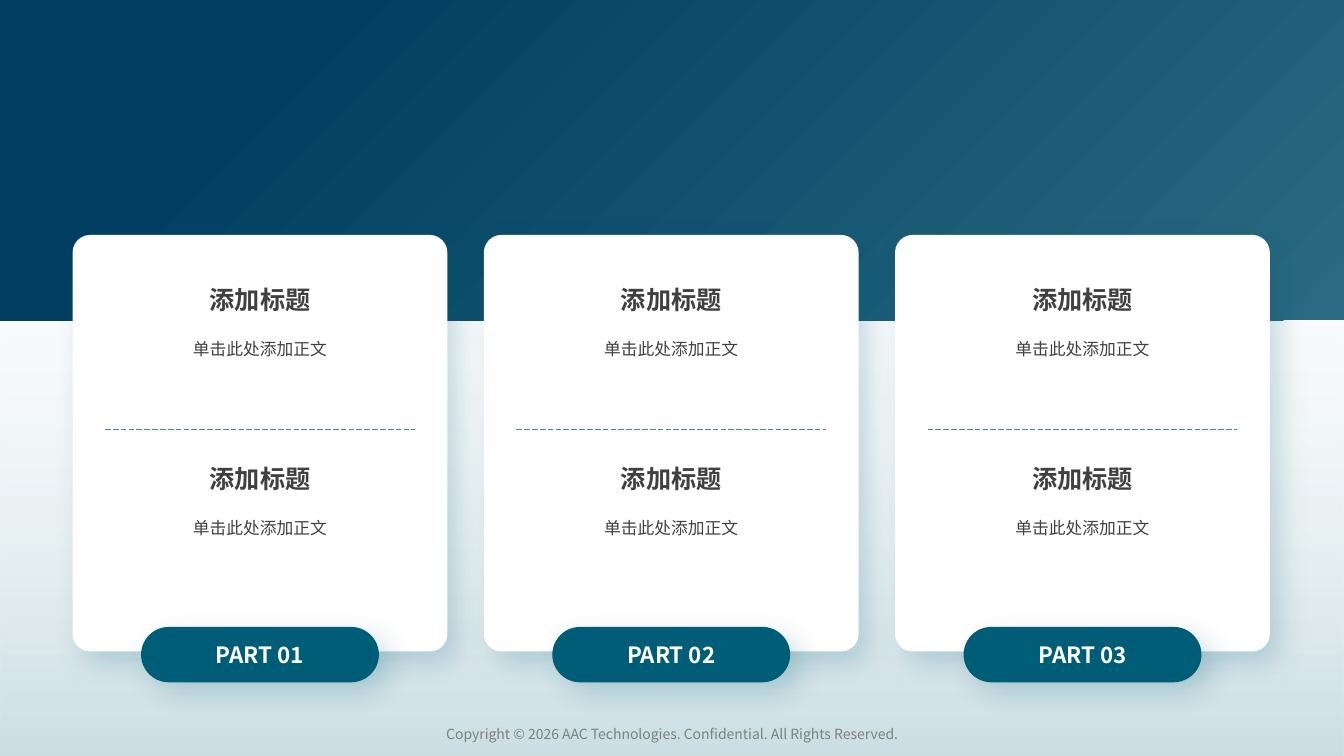
from dataclasses import dataclass

from pptx import Presentation
from pptx.dml.color import RGBColor
from pptx.enum.dml import MSO_LINE
from pptx.enum.shapes import MSO_CONNECTOR, MSO_SHAPE
from pptx.enum.text import MSO_ANCHOR, PP_ALIGN
from pptx.oxml import parse_xml
from pptx.oxml.ns import nsdecls, qn
from pptx.oxml.xmlchemy import OxmlElement
from pptx.util import Inches, Pt


@dataclass(frozen=True)
class Theme:
    font: str = "Noto Sans CJK SC"
    teal: str = "005D77"
    mist: str = "DCE8ED"
    navy: str = "003F61"
    steel: str = "2A6A82"
    rule: str = "438A9C"
    white: str = "FFFFFF"
    text: str = "404040"
    muted: str = "808080"
    heading: int = 18
    label: int = 16
    body: int = 12
    footer: int = 10


class Deck:
    """Holds the theme and the current slide; lengths are percent of its size."""

    def __init__(self, theme):
        self.theme = theme
        self.prs = Presentation()
        self.prs.slide_width, self.prs.slide_height = Inches(13.34), Inches(7.5)
        self.s = self.prs.slides.add_slide(self.prs.slide_layouts[6])

    def place(self, x, y, w, h):
        sw, sh = self.prs.slide_width, self.prs.slide_height
        return [round(size * share / 100)
                for size, share in ((sw, x), (sh, y), (sw, w), (sh, h))]

    def shape(self, box, kind=MSO_SHAPE.RECTANGLE, fill=None, radius=None):
        sp = self.s.shapes.add_shape(kind, *self.place(*box))
        sp.shadow.inherit = False
        sp.line.fill.background()
        if fill:
            sp.fill.solid()
            sp.fill.fore_color.rgb = RGBColor.from_string(fill)
        else:
            sp.fill.background()
        if radius is not None:
            sp.adjustments[0] = radius
        return sp

    def gradient(self, box, stops, direction):
        """Stops are (position, colour, opacity), in percent."""
        sp = self.shape(box)
        marks = "".join(
            f'<a:gs pos="{pos * 1000}"><a:srgbClr val="{color}">'
            f'<a:alpha val="{alpha * 1000}"/></a:srgbClr></a:gs>'
            for pos, color, alpha in stops)
        grad = parse_xml(f'<a:gradFill {nsdecls("a")} rotWithShape="1">'
                         f'<a:gsLst>{marks}</a:gsLst>{direction}</a:gradFill>')
        spPr = sp._element.spPr
        spPr.replace(spPr.find(qn("a:noFill")), grad)

    def raised(self, box, fill, radius):
        """Rounded box with a soft shadow to the lower right."""
        sp = self.shape(box, MSO_SHAPE.ROUNDED_RECTANGLE, fill, radius)
        effects = sp._element.spPr.find(qn("a:effectLst"))
        effects.append(parse_xml(
            f'<a:outerShdw {nsdecls("a")} blurRad="{Pt(20)}" dist="{Pt(10)}" '
            f'dir="2700000" algn="tl" rotWithShape="0">'
            f'<a:srgbClr val="{self.theme.teal}"><a:alpha val="20000"/>'
            f'</a:srgbClr></a:outerShdw>'))
        return sp

    def label(self, sp, text, size, color, bold=False, anchor=MSO_ANCHOR.TOP,
              spacing=None, after=0):
        tf = sp.text_frame
        tf.word_wrap = True
        tf.vertical_anchor = anchor
        p = tf.paragraphs[0]
        p.alignment = PP_ALIGN.CENTER
        p.space_after = Pt(after)
        if spacing:
            p.line_spacing = spacing
        r = p.add_run()
        r.text = text
        r.font.size, r.font.bold, r.font.name = Pt(size), bold, self.theme.font
        r.font.color.rgb = RGBColor.from_string(color)
        ea = OxmlElement("a:ea")
        ea.set("typeface", self.theme.font)
        r._r.get_or_add_rPr().append(ea)

    def text(self, box, text, size, color, **style):
        sp = self.s.shapes.add_textbox(*self.place(*box))
        self.label(sp, text, size, color, **style)

    def dashes(self, x, y, w):
        left, top, width, _ = self.place(x, y, w, 0)
        c = self.s.shapes.add_connector(
            MSO_CONNECTOR.STRAIGHT, left, top, left + width, top)
        c.line.color.rgb = RGBColor.from_string(self.theme.rule)
        c.line.width = Pt(0.5)
        c.line.dash_style = MSO_LINE.LONG_DASH
        c._element.spPr.append(OxmlElement("a:effectLst"))


UPWARD = '<a:lin ang="16200000" scaled="0"/>'
FROM_TOP_LEFT = ('<a:path path="circle"><a:fillToRect r="100000" b="100000"/>'
                 '</a:path><a:tileRect l="-100000" t="-100000"/>')
CARD_LEFT, CARD_PITCH, CARD_WIDTH = 5.4, 30.6, 27.89
SECTION_TOP, SECTION_PITCH = 35.73, 23.7


def centred(card_x, width):
    return card_x + (CARD_WIDTH - width) / 2


def main():
    t = Theme()
    deck = Deck(t)

    # Background wash and top band
    deck.gradient((0, 0, 100, 100), [(0, t.teal, 20), (80, t.mist, 0)], UPWARD)
    deck.gradient((0, 0, 100, 42.4), [(20, t.navy, 100), (100, t.steel, 100)],
                  FROM_TOP_LEFT)

    # Footer
    deck.text((23.39, 95.33, 53.22, 3.6),
              "Copyright © 2026 AAC Technologies. Confidential. All Rights Reserved.",
              t.footer, t.muted)

    # Three cards, each with two sections and a part label
    for i in range(3):
        x = CARD_LEFT + i * CARD_PITCH
        deck.raised((x, 31.07, CARD_WIDTH, 55.1), t.white, 0.047)
        pill = deck.raised((centred(x, 17.7), 82.93, 17.7, 7.33), t.teal, 0.5)
        deck.label(pill, f"PART {i + 1:02}", t.label, t.white, bold=True,
                   anchor=MSO_ANCHOR.MIDDLE)
        for j in range(2):
            y = SECTION_TOP + j * SECTION_PITCH
            left = centred(x, 24.5)
            deck.text((left, y, 24.5, 6.53), "添加标题", t.heading, t.text,
                      bold=True, anchor=MSO_ANCHOR.BOTTOM, after=3)
            deck.text((left, y + 7.05, 24.5, 12.13), "单击此处添加正文",
                      t.body, t.text, spacing=1.5, after=3)
        deck.dashes(centred(x, 23.05), 56.8, 23.05)

    deck.prs.save("out.pptx")


if __name__ == "__main__":
    main()
